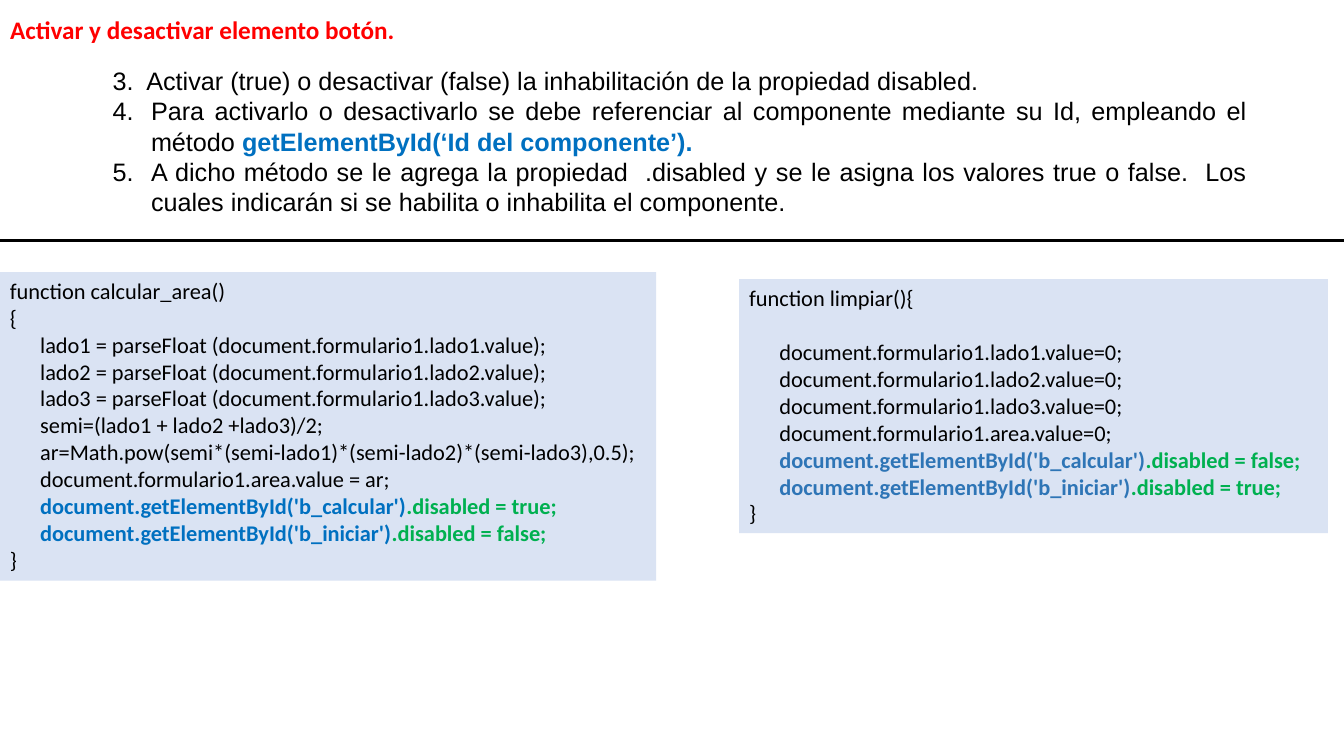
from lxml import etree
from pptx import Presentation
from pptx.dml.color import RGBColor
from pptx.enum.shapes import MSO_CONNECTOR, MSO_SHAPE
from pptx.enum.text import MSO_ANCHOR, MSO_AUTO_SIZE, PP_ALIGN
from pptx.oxml.ns import qn
from pptx.util import Inches, Pt

RECTANGLE = MSO_SHAPE.RECTANGLE
STRAIGHT = MSO_CONNECTOR.STRAIGHT
TOP = MSO_ANCHOR.TOP
GROW = MSO_AUTO_SIZE.SHAPE_TO_FIT_TEXT
LEFT, JUSTIFY = PP_ALIGN.LEFT, PP_ALIGN.JUSTIFY
TITLE_ONLY = 5
COLUMNS, ROWS = 40, 30
BLACK, RED, BLUE, STEEL, GREEN, PALE = "000000", "FF0000", "0070C0", "2E75B6", "00B050", "DAE3F3"
CODE_SIZE, TEXT_SIZE = 16, 18
CODE_LINE = 19.5


def colour(value):
    """Turn a hex string into a colour."""
    return RGBColor.from_string(value)


class CodeSlide:
    """Hold the slide, its grid and its text style."""

    def __init__(self, deck):
        """Add a title-only slide to the deck."""
        self.slide = deck.slides.add_slide(deck.slide_layouts[TITLE_ONLY])
        self.column = deck.slide_width / COLUMNS
        self.row = deck.slide_height / ROWS

    def place(self, left, top, width, height):
        """Convert grid cells to slide lengths."""
        return (int(left * self.column), int(top * self.row),
                int(width * self.column), int(height * self.row))

    def frame(self, holder):
        """Prepare a wrapped text frame that starts at the top."""
        body = holder.text_frame
        body.word_wrap = True
        body.auto_size = GROW
        body.vertical_anchor = TOP
        return body

    def set_text(self, paragraph, parts, font, size, align=LEFT):
        """Fill a paragraph with (text, colour) parts; coloured parts are bold."""
        paragraph.alignment = align
        paragraph.font.name = font
        paragraph.font.size = Pt(size)
        paragraph.font.color.rgb = colour(BLACK)
        paragraph.font.bold = False
        for text, tint in parts:
            run = paragraph.add_run()
            run.text = text
            if tint != BLACK:
                run.font.bold = True
                run.font.color.rgb = colour(tint)

    def title(self, cells, text):
        """Move and format the title placeholder."""
        heading = self.slide.shapes.title
        heading.left, heading.top, heading.width, heading.height = self.place(*cells)
        paragraph = self.frame(heading).paragraphs[0]
        self.set_text(paragraph, [(text, RED)], "Calibri", TEXT_SIZE)

    def steps(self, cells, items, first_number):
        """Add justified steps; those after the first are numbered automatically."""
        body = self.frame(self.slide.shapes.add_textbox(*self.place(*cells)))
        for index, parts in enumerate(items):
            paragraph = body.add_paragraph() if index else body.paragraphs[0]
            self.set_text(paragraph, parts, "Arial", TEXT_SIZE, JUSTIFY)
            if index:
                properties = paragraph._p.get_or_add_pPr()
                properties.set("marL", str(Inches(0.38)))
                properties.set("indent", str(-Inches(0.38)))
                numbering = etree.Element(qn("a:buAutoNum"), type="arabicPeriod",
                                          startAt=str(first_number))
                properties.insert(0, numbering)

    def code(self, cells, opening, statements, gap=0):
        """Add a code panel with indented statements and a closing brace."""
        panel = self.slide.shapes.add_shape(RECTANGLE, *self.place(*cells))
        panel.shadow.inherit = False
        panel.fill.solid()
        panel.fill.fore_color.rgb = colour(PALE)
        panel.line.fill.background()
        body = self.frame(panel)
        outer = plain(*opening)
        lines = outer + statements + plain("}")
        for index, parts in enumerate(lines):
            paragraph = body.add_paragraph() if index else body.paragraphs[0]
            self.set_text(paragraph, parts, "Calibri", CODE_SIZE)
            if len(outer) <= index < len(lines) - 1:
                paragraph._p.get_or_add_pPr().set("marL", str(Inches(0.3)))
            if index == len(outer):
                paragraph.space_before = Pt(gap)

    def divider(self, row):
        """Draw a line across the slide."""
        left, y, width, _ = self.place(0, row, COLUMNS, 0)
        rule = self.slide.shapes.add_connector(STRAIGHT, left, y, width, y)
        rule.line.color.rgb = colour(BLACK)
        rule.line.width = Pt(2.25)
        etree.SubElement(rule._element.spPr, qn("a:effectLst"))


def plain(*lines):
    """Make one black part for each line."""
    return [[(line, BLACK)] for line in lines]


def toggles(tint, calcular, iniciar):
    """Make the statements that set both buttons."""
    return [[(f"document.getElementById('{button}')", tint), (f".disabled = {state};", GREEN)]
            for button, state in (("b_calcular", calcular), ("b_iniciar", iniciar))]


def main():
    """Build and save the slide."""
    deck = Presentation()
    deck.slide_width, deck.slide_height = Inches(13.33), Inches(7.5)
    page = CodeSlide(deck)
    sides = ("lado1", "lado2", "lado3")

    page.code((0, 10.8, 19.53, 12.24), ["function calcular_area()", "{"],
              plain(*(f"{side} = parseFloat (document.formulario1.{side}.value);" for side in sides),
                    "semi=(lado1 + lado2 +lado3)/2;",
                    "ar=Math.pow(semi*(semi-lado1)*(semi-lado2)*(semi-lado3),0.5);",
                    "document.formulario1.area.value = ar;")
              + toggles(BLUE, "true", "false"))
    page.title((0, 0.36, 12.63, 1.6), "Activar y desactivar elemento botón.")
    page.steps((3.06, 2.4, 34.35, 6.48), [
        [("3.  Activar (true) o desactivar (false) la inhabilitación de la propiedad disabled.", BLACK)],
        [("Para activarlo o desactivarlo se debe referenciar al componente mediante su Id, "
          "empleando el método ", BLACK), ("getElementById(‘Id del componente’).", BLUE)],
        [("A dicho método se le agrega la propiedad  .disabled y se le asigna los valores true o false.  "
          "Los cuales indicarán si se habilita o inhabilita el componente.", BLACK)],
    ], 4)
    page.divider(9.56)
    page.code((22, 11.08, 17.52, 10.08), ["function limpiar(){"],
              plain(*(f"document.formulario1.{field}.value=0;" for field in (*sides, "area")))
              + toggles(STEEL, "false", "true"), CODE_LINE)
    deck.save("out.pptx")


if __name__ == "__main__":
    main()
